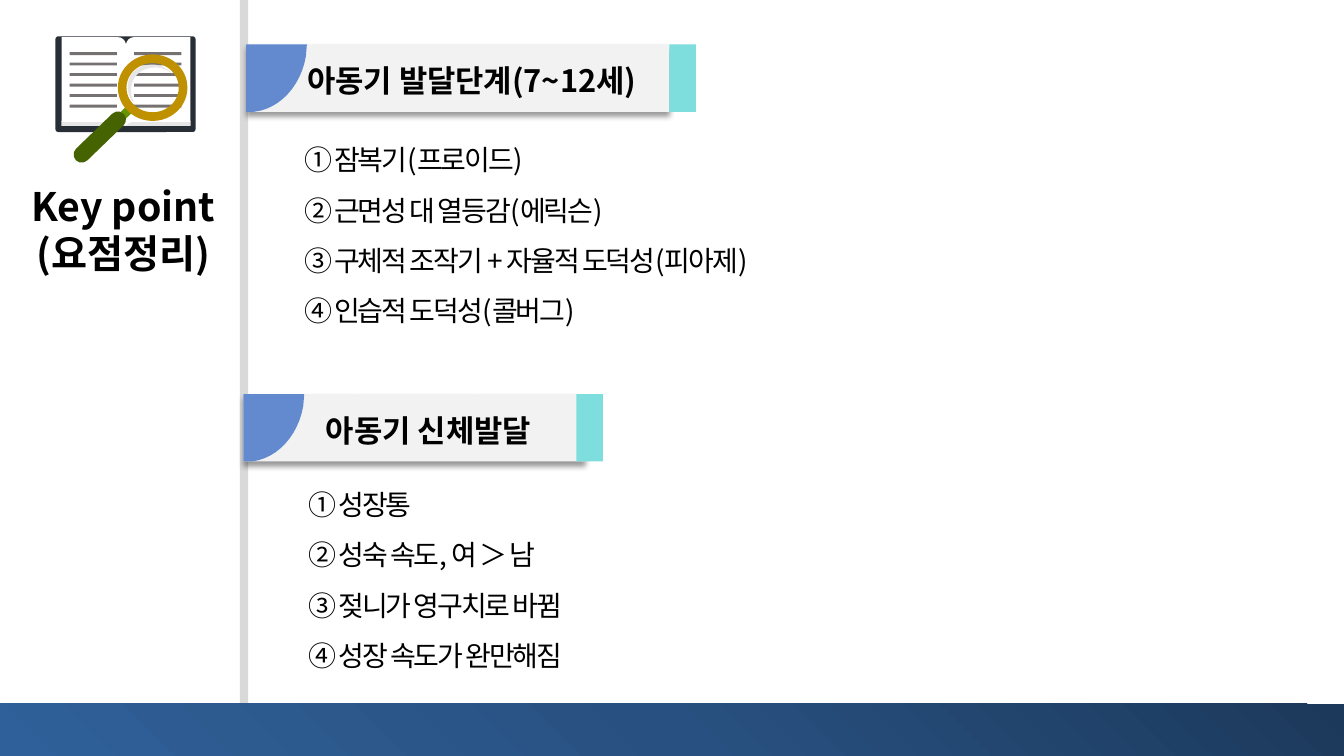
from dataclasses import dataclass

from pptx import Presentation
from pptx.dml.color import RGBColor
from pptx.enum.shapes import MSO_SHAPE
from pptx.enum.text import MSO_ANCHOR, MSO_AUTO_SIZE, PP_ALIGN
from pptx.oxml import parse_xml
from pptx.oxml.ns import qn
from pptx.shapes.autoshape import Shape
from pptx.slide import Slide
from pptx.text.text import TextFrame
from pptx.util import Pt

RECTANGLE = MSO_SHAPE.RECTANGLE
ROUNDED = MSO_SHAPE.ROUNDED_RECTANGLE
DONUT = MSO_SHAPE.DONUT
LEFT, CENTER = PP_ALIGN.LEFT, PP_ALIGN.CENTER
TOP = MSO_ANCHOR.TOP
GROW = MSO_AUTO_SIZE.SHAPE_TO_FIT_TEXT

FONT = "Noto Sans CJK KR"
DRAWING_NS = 'xmlns:a="http://schemas.openxmlformats.org/drawingml/2006/main"'
BLACK = RGBColor(0x00, 0x00, 0x00)
WHITE = RGBColor(0xFF, 0xFF, 0xFF)
DIVIDER_GRAY = RGBColor(0xD9, 0xD9, 0xD9)
BAR_GRAY = RGBColor(0xF2, 0xF2, 0xF2)
CORNER_BLUE = RGBColor(0x63, 0x8A, 0xCF)
CAP_TEAL = RGBColor(0x7E, 0xDE, 0xDE)
COVER = RGBColor(0x27, 0x2E, 0x36)
PALE_GRAY = RGBColor(0xE7, 0xE6, 0xE6)
LINE_GRAY = RGBColor(0x76, 0x71, 0x71)
STEM_GREEN = RGBColor(0x67, 0x94, 0x00)
GRIP_GREEN = RGBColor(0x45, 0x63, 0x00)
RING_GOLD = RGBColor(0xBF, 0x90, 0x00)
FOOTER_STOPS = ((0, "1C395B"), (50, "285181"), (100, "306099"))

SPINE = 90
BANNER_HEIGHT = 48.2
CAP_WIDTH = 18.9

# An outline is a start point, then lines (x, y) and cubic curves (three points).
Outline = list[tuple[float, ...]]
PAGE: Outline = [
    (0, 90), (0, 32), (0.5, 28.5, 3, 26.6, 5.8, 26.6), (46, 26.6),
    (46, 87.1), (5.8, 87.1), (3, 87.1, 1, 88.3, 0, 90),
]
LENS_SHINE: Outline = [
    (96.5, 74.2), (87, 66, 90, 46.1, 108.7, 46.1), (114.5, 46.1, 120, 49, 123.1, 52.6),
    (119, 49.5, 115, 48.2, 110.9, 48.2), (101, 48.2, 93.6, 55, 93.6, 64.1),
    (93.6, 68, 94.5, 71.5, 96.5, 74.2),
]
CORNER: Outline = [
    (0, 0), (43.5, 0), (42.8, 8.6), (39.2, 29.5, 24.5, 46, 6, BANNER_HEIGHT),
    (0, BANNER_HEIGHT),
]


@dataclass(frozen=True)
class Box:
    left: float
    top: float
    width: float
    height: float

    def lengths(self) -> tuple[Pt, Pt, Pt, Pt]:
        return Pt(self.left), Pt(self.top), Pt(self.width), Pt(self.height)


@dataclass(frozen=True)
class Section:
    bar: Box
    cap_left: float
    heading: str
    heading_box: Box
    heading_alignment: PP_ALIGN
    heading_wraps: bool
    points: tuple[str, ...]
    points_box: Box


SECTIONS = (
    Section(
        Box(175.7, 31.7, 302.4, BANNER_HEIGHT), 478.1,
        "아동기 발달단계(7~12세)", Box(212.4, 40.3, 270.7, 33.8), LEFT, False,
        ("① 잠복기(프로이드)", "② 근면성 대 열등감(에릭슨)",
         "③ 구체적 조작기 + 자율적 도덕성(피아제)", "④ 인습적 도덕성(콜버그)"),
        Box(210.2, 86.4, 479.5, 152.6),
    ),
    Section(
        Box(173.8, 281.5, 244.1, BANNER_HEIGHT), 411.8,
        "아동기 신체발달", Box(211, 290.2, 190.1, 33.8), CENTER, True,
        ("① 성장통", "② 성숙 속도, 여 ＞ 남",
         "③ 젖니가 영구치로 바뀜", "④ 성장 속도가 완만해짐"),
        Box(213.1, 332.6, 479.5, 152.6),
    ),
)


def paint(shape: Shape, color: RGBColor) -> None:
    shape.shadow.inherit = False
    shape.fill.solid()
    shape.fill.fore_color.rgb = color
    shape.line.fill.background()


def add_preset(slide: Slide, kind: MSO_SHAPE, box: Box, color: RGBColor) -> Shape:
    shape = slide.shapes.add_shape(kind, *box.lengths())
    paint(shape, color)
    return shape


def add_outline(slide: Slide, outline: Outline, color: RGBColor,
                left: float = 0, top: float = 0, direction: int = 1) -> None:
    """Draw an outline moved to left/top; direction -1 mirrors it sideways."""
    points = [outline[0]]
    for segment in outline[1:]:
        if len(segment) == 2:
            points.append(segment)
            continue
        curve = (*points[-1], *segment)
        for step in range(1, 13):
            t = step / 12
            weights = ((1 - t) ** 3, 3 * t * (1 - t) ** 2, 3 * t * t * (1 - t), t ** 3)
            points.append(tuple(
                sum(weight * value for weight, value in zip(weights, curve[axis::2]))
                for axis in (0, 1)
            ))
    placed = [(Pt(left + direction * x), Pt(top + y)) for x, y in points]
    builder = slide.shapes.build_freeform(*placed[0])
    builder.add_line_segments(placed[1:], close=True)
    paint(builder.convert_to_shape(), color)


def write_text(frame: TextFrame, lines: tuple[str, ...], size: float, bold: bool,
               alignment: PP_ALIGN, line_spacing: float = 1.0,
               tracking: int = 0, wraps: bool = True) -> None:
    """Fill a frame with one paragraph per line; tracking is in 1/100 point."""
    frame.text = "\n".join(lines)
    frame.word_wrap = wraps
    frame.auto_size = GROW
    frame.vertical_anchor = TOP
    for paragraph in frame.paragraphs:
        paragraph.alignment = alignment
        paragraph.line_spacing = line_spacing
        for run in paragraph.runs:
            run.font.size = Pt(size)
            run.font.bold = bold
            run.font.color.rgb = BLACK
            run.font.name = FONT
            properties = run.font._element
            properties.find(qn("a:latin")).addnext(
                parse_xml(f'<a:ea {DRAWING_NS} typeface="{FONT}"/>'))
            if tracking:
                properties.set("spc", str(tracking))


def add_footer(slide: Slide) -> None:
    footer = slide.shapes.add_shape(RECTANGLE, *Box(0, 502.6, 960, 37.4).lengths())
    footer.shadow.inherit = False
    footer.line.fill.background()
    stops = "".join(
        f'<a:gs pos="{position * 1000}"><a:srgbClr val="{color}"/></a:gs>'
        for position, color in FOOTER_STOPS
    )
    footer._element.spPr.find(qn("a:prstGeom")).addnext(parse_xml(
        f'<a:gradFill {DRAWING_NS} rotWithShape="1"><a:gsLst>{stops}</a:gsLst>'
        f'<a:lin ang="{135 * 60000}" scaled="0"/></a:gradFill>'))


def add_book(slide: Slide) -> None:
    cover = add_preset(slide, ROUNDED, Box(39.6, 25.9, 100.1, 68.4), COVER)
    cover.adjustments[0] = 0.03
    add_preset(slide, RECTANGLE, Box(43.9, 86.4, 92.2, 3.6), PALE_GRAY)
    for direction in (1, -1):
        add_outline(slide, PAGE, WHITE, left=SPINE, direction=direction)
    for left in (95.8, 49.7):
        for row in range(6):
            add_preset(slide, RECTANGLE, Box(left, 37.3 + 7.5 * row, 33.8, 2), LINE_GRAY)


def add_magnifier(slide: Slide) -> None:
    handle_parts = (
        (Box(48.5, 91, 55, 6), STEM_GREEN),
        (Box(47.5, 92.1, 47.6, 11.6), GRIP_GREEN),
    )
    for box, color in handle_parts:
        part = add_preset(slide, ROUNDED, box, color)
        part.adjustments[0] = 0.5
        part.rotation = -44
    ring = add_preset(slide, DONUT, Box(84.2, 38.9, 49.7, 47.5), RING_GOLD)
    ring.adjustments[0] = 0.13
    add_outline(slide, LENS_SHINE, PALE_GRAY)


def add_section(slide: Slide, section: Section) -> None:
    bar = add_preset(slide, RECTANGLE, section.bar, BAR_GRAY)
    bar._element.spPr.find(qn("a:effectLst")).append(parse_xml(
        f'<a:outerShdw {DRAWING_NS} blurRad="{Pt(4)}" dist="{Pt(3)}" dir="5400000" '
        'algn="t" rotWithShape="0"><a:srgbClr val="000000"><a:alpha val="40000"/>'
        '</a:srgbClr></a:outerShdw>'))
    add_outline(slide, CORNER, CORNER_BLUE, section.bar.left, section.bar.top)
    cap = Box(section.cap_left, section.bar.top, CAP_WIDTH, BANNER_HEIGHT)
    add_preset(slide, RECTANGLE, cap, CAP_TEAL)
    heading = slide.shapes.add_textbox(*section.heading_box.lengths())
    write_text(heading.text_frame, (section.heading,), 22, True,
               section.heading_alignment, wraps=section.heading_wraps)
    points = slide.shapes.add_textbox(*section.points_box.lengths())
    write_text(points.text_frame, section.points, 20, False, LEFT,
               line_spacing=1.5, tracking=-150)


def main() -> None:
    presentation = Presentation()
    presentation.slide_width, presentation.slide_height = Pt(960), Pt(540)
    slide = presentation.slides.add_slide(presentation.slide_layouts[5])

    title = slide.shapes.title
    title.left, title.top, title.width, title.height = Box(14.4, 126.7, 147.6, 74.9).lengths()
    write_text(title.text_frame, ("Key point", "(요점정리)"), 28, True, CENTER)

    add_preset(slide, RECTANGLE, Box(171.4, 0, 5.8, 508.3), DIVIDER_GRAY)
    add_footer(slide)
    add_book(slide)
    add_magnifier(slide)
    for section in SECTIONS:
        add_section(slide, section)
    presentation.save("out.pptx")


if __name__ == "__main__":
    main()
